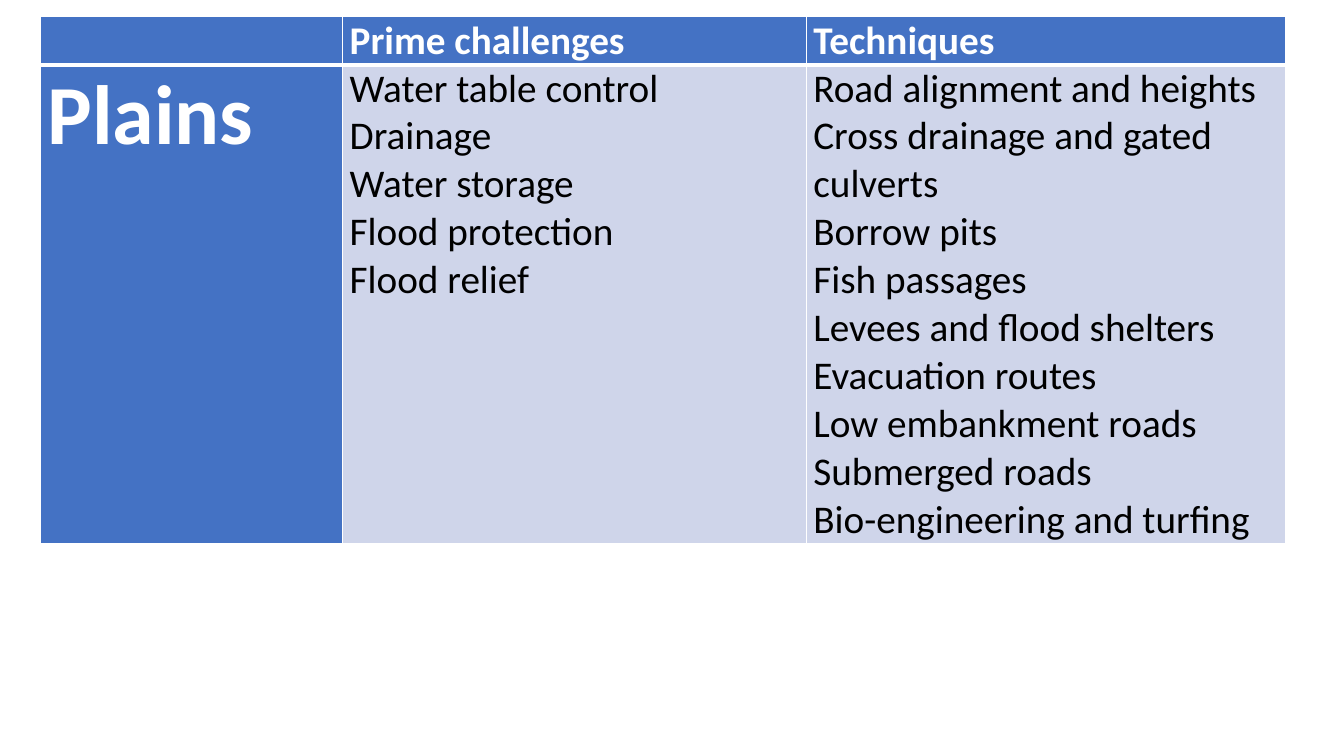
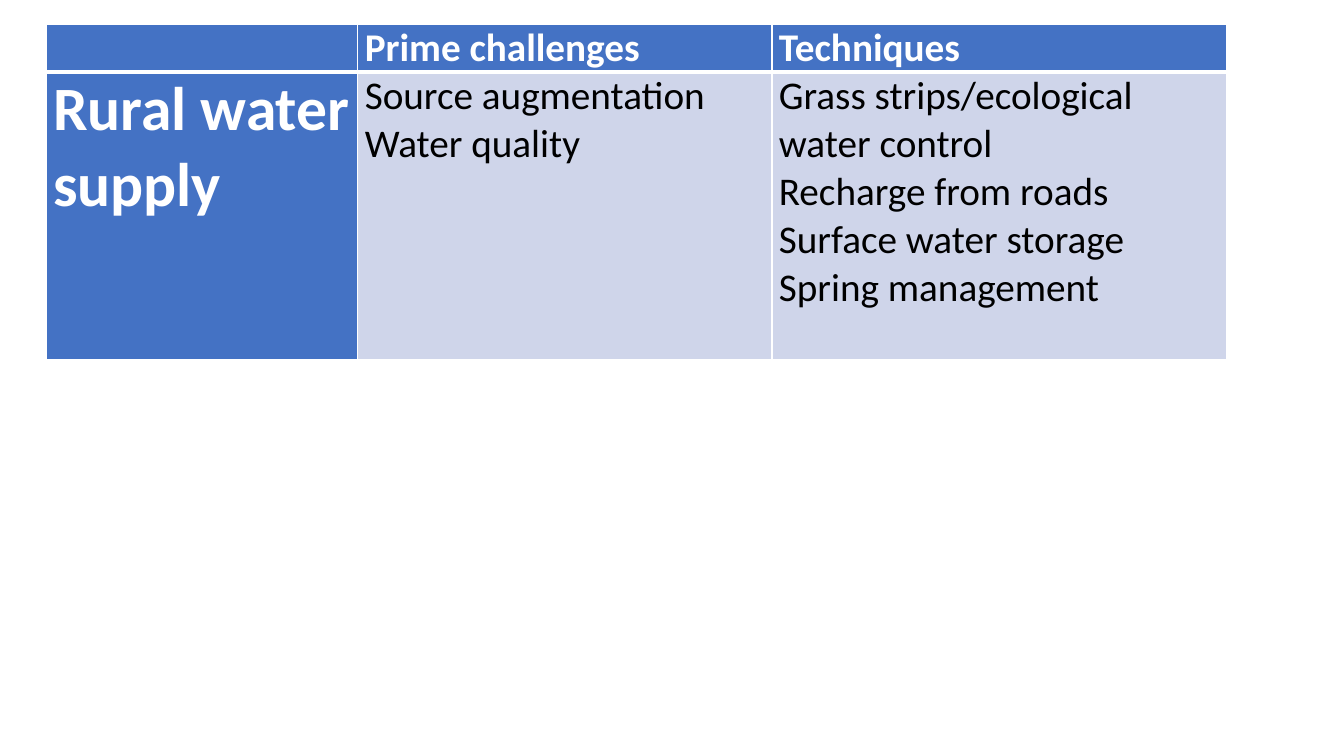
from lxml.etree import SubElement
from pptx import Presentation
from pptx.dml.color import RGBColor as Color
from pptx.oxml.ns import qn
from pptx.util import Inches, Pt

COLORS = {"band": "4472C4", "body": "CFD5EA", "light": "FFFFFF", "dark": "000000"}
GRID_COLUMNS, GRID_ROWS = 160, 90
UNIT = Inches(1) / 12
HEADER_HEIGHT = 5.7
HEADINGS = ("", "Prime challenges", "Techniques")

TOPICS = [
    {
        "name": "Plains",
        "name_size": 60,
        "origin": (4.8, 2),
        "columns": (36, 55.2, 57),
        "body_height": 56.8,
        "challenges": ["Water table control", "Drainage", "Water storage",
                       "Flood protection", "Flood relief"],
        "techniques": ["Road alignment and heights",
                       "Cross drainage and gated culverts", "Borrow pits",
                       "Fish passages", "Levees and flood shelters",
                       "Evacuation routes", "Low embankment roads",
                       "Submerged roads", "Bio-engineering and turfing"],
    },
    {
        "name": "Rural water supply",
        "name_size": 44,
        "origin": (5.5, 2.9),
        "columns": (37.1, 49.3, 54.1),
        "body_height": 34.2,
        "challenges": ["Source augmentation", "Water quality"],
        "techniques": ["Grass strips/ecological water control",
                       "Recharge from roads", "Surface water storage",
                       "Spring management"],
    },
]


def grid(count):
    """Turn a number of grid units into a slide length."""
    return round(count * UNIT)


class Deck:
    cell_format = {"margin_left": Inches(0.07), "margin_right": Inches(0.07),
                   "margin_top": 0, "margin_bottom": 0}
    heading_format = {"name": "Calibri", "size": Pt(28), "bold": True}
    body_format = {**heading_format, "bold": False}

    def __init__(self):
        self.presentation = Presentation()
        self.presentation.slide_width = grid(GRID_COLUMNS)
        self.presentation.slide_height = grid(GRID_ROWS)
        self.slide = None

    def add_slide(self):
        blank = self.presentation.slide_layouts[6]
        self.slide = self.presentation.slides.add_slide(blank)

    def add_borders(self, cell, **widths):
        """Draw light borders; widths are points by side: L, R, T, B."""
        properties = cell._tc.get_or_add_tcPr()
        for side, width in widths.items():
            line = SubElement(properties, qn(f"a:ln{side}"), w=str(Pt(width)))
            fill = SubElement(line, qn("a:solidFill"))
            SubElement(fill, qn("a:srgbClr"), val=COLORS["light"])

    def fill_cell(self, cell, text, fill, text_color, font_format):
        for name, value in self.cell_format.items():
            setattr(cell, name, value)
        cell.fill.solid()
        cell.fill.fore_color.rgb = Color.from_string(COLORS[fill])
        cell.text = text
        for paragraph in cell.text_frame.paragraphs:
            for run in paragraph.runs:
                for name, value in font_format.items():
                    setattr(run.font, name, value)
                run.font.color.rgb = Color.from_string(COLORS[text_color])

    def add_topic_table(self, topic):
        left, top = topic["origin"]
        heights = (HEADER_HEIGHT, topic["body_height"])
        frame = self.slide.shapes.add_table(
            2, len(HEADINGS), grid(left), grid(top),
            grid(sum(topic["columns"])), grid(sum(heights)))
        table = frame.table
        table.horz_banding = False
        for column, width in zip(table.columns, topic["columns"]):
            column.width = grid(width)
        for row, height in zip(table.rows, heights):
            row.height = grid(height)

        name_format = {**self.heading_format, "size": Pt(topic["name_size"])}
        body = (
            (topic["name"], "band", "light", name_format),
            ("\n".join(topic["challenges"]), "body", "dark", self.body_format),
            ("\n".join(topic["techniques"]), "body", "dark", self.body_format),
        )
        for index, (heading, content) in enumerate(zip(HEADINGS, body)):
            header_cell, body_cell = table.cell(0, index), table.cell(1, index)
            self.add_borders(header_cell, L=1, R=1, T=1, B=3)
            self.add_borders(body_cell, L=1, R=1, T=3, B=1)
            self.fill_cell(header_cell, heading, "band", "light", self.heading_format)
            self.fill_cell(body_cell, *content)


def main():
    deck = Deck()
    for topic in TOPICS:
        deck.add_slide()
        deck.add_topic_table(topic)
    deck.presentation.save("out.pptx")


if __name__ == "__main__":
    main()
